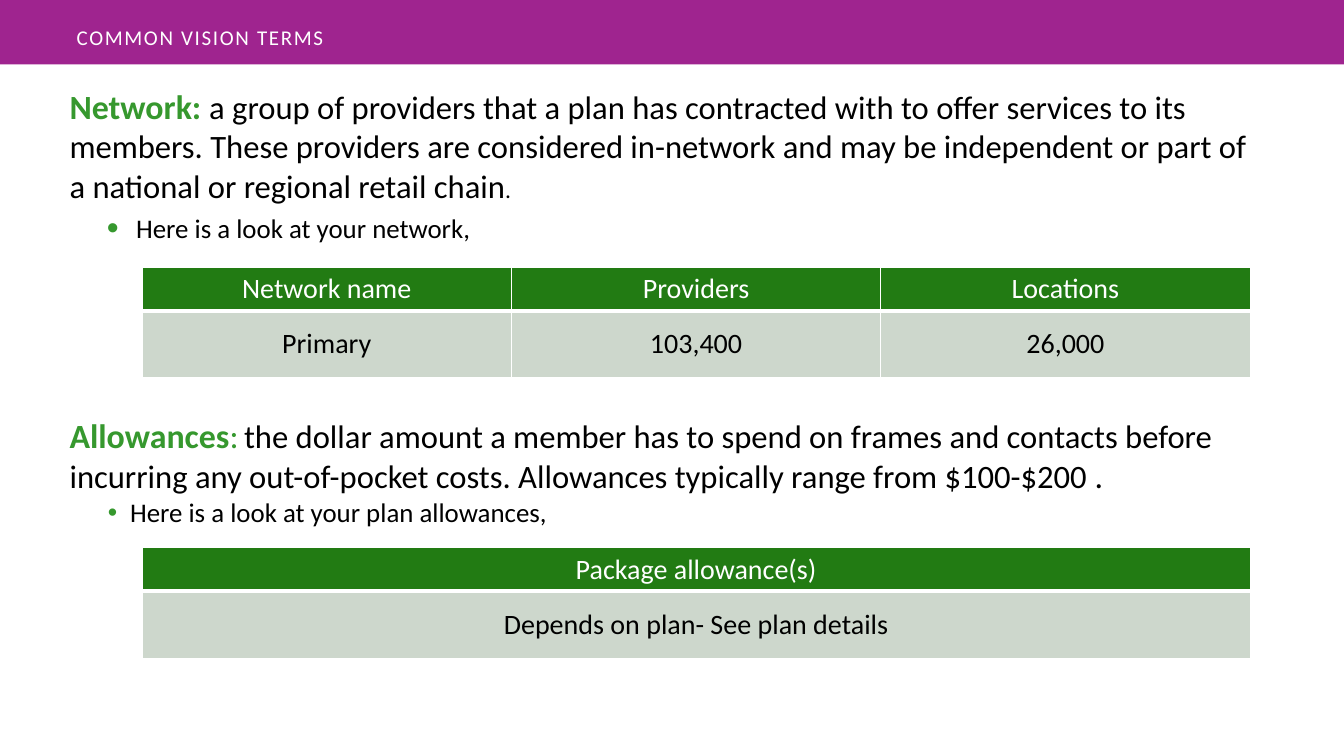
from lxml import etree
from pptx import Presentation
from pptx import util as u
from pptx.dml.color import RGBColor
from pptx.enum import shapes, text
from pptx.oxml.ns import qn

FONT = "Calibri"
PURPLE, GREEN, DARK_GREEN, PALE = "9F248F", "36982E", "227B13", "CDD7CC"
WHITE, BLACK = "FFFFFF", "000000"
WIDTH, HEIGHT = 13.33, 7.5
LEFT, TEXT_WIDTH = 0.57, 12.14
GRID_LEFT, GRID_WIDTH = 1.41, 10.99

HEADING = "COMMON VISION TERMS"
TERMS = [
    {
        "top": 0.79, "height": 1.75,
        "definition": [
            ("Network: ", 24.2, GREEN, True),
            ("a group of providers that a plan has contracted with to offer services "
             "to its members. These providers are considered in-network and may be "
             "independent or part of a national or regional retail chain", 23.3, BLACK, False),
            (".", 16.7, BLACK, False),
        ],
        "lead": "Here is a look at your network,",
        "margin": 0.66, "hang": 0.29, "bullet_size": 126, "gap": 5,
        "grid_top": 2.65, "row_heights": (0.43, 0.66),
        "rows": [("Network name", "Providers", "Locations"),
                 ("Primary", "103,400", "26,000")],
    },
    {
        "top": 4.05, "height": 1.3,
        "definition": [
            ("Allowances", 24.2, GREEN, True),
            (":", 24.2, GREEN, False),
            (" ", 16.7, GREEN, False),
            ("the dollar amount a member has to spend on frames and contacts before "
             "incurring any out-of-pocket costs. Allowances typically range from "
             "$100-$200 ", 23.3, BLACK, False),
            (".", 24.2, BLACK, False),
        ],
        "lead": "Here is a look at your plan allowances,",
        "margin": 0.6, "hang": 0.22, "bullet_size": 100, "gap": 0,
        "grid_top": 5.43, "row_heights": (0.43, 0.67),
        "rows": [("Package allowance(s)",), ("Depends on plan- See plan details",)],
    },
]


def color(value):
    return RGBColor.from_string(value)


def style(run, size, value, bold=False):
    run.font.name = FONT
    run.font.size = u.Pt(size)
    run.font.color.rgb = color(value)
    run.font.bold = bold


def place(shape, left, top, width, height):
    shape.left, shape.top = u.Inches(left), u.Inches(top)
    shape.width, shape.height = u.Inches(width), u.Inches(height)


def set_insets(frame, across, down):
    frame.margin_left = frame.margin_right = u.Inches(across)
    frame.margin_top = frame.margin_bottom = u.Inches(down)


def add_bullet(paragraph, term):
    props = paragraph._p.get_or_add_pPr()
    props.set("marL", str(u.Inches(term["margin"])))
    props.set("indent", str(-u.Inches(term["hang"])))
    tint = etree.SubElement(props, qn("a:buClr"))
    etree.SubElement(tint, qn("a:srgbClr"), val=GREEN)
    etree.SubElement(props, qn("a:buSzPct"), val=str(term["bullet_size"] * 1000))
    etree.SubElement(props, qn("a:buFont"), typeface="Arial")
    etree.SubElement(props, qn("a:buChar"), char="•")


def add_borders(cell, bottom):
    props = cell._tc.get_or_add_tcPr()
    for side, points in (("L", 1), ("R", 1), ("T", 1), ("B", bottom)):
        line = etree.SubElement(props, qn("a:ln" + side), w=str(u.Pt(points)))
        fill = etree.SubElement(line, qn("a:solidFill"))
        etree.SubElement(fill, qn("a:srgbClr"), val=WHITE)


def add_heading(slide):
    band = slide.shapes.add_shape(shapes.MSO_SHAPE.RECTANGLE, 0, 0,
                                  u.Inches(WIDTH), u.Inches(0.64))
    band.shadow.inherit = False
    band.fill.solid()
    band.fill.fore_color.rgb = color(PURPLE)
    band.line.fill.background()
    slide.shapes._spTree.insert(2, band._element)

    heading = slide.shapes.title
    place(heading, 0.6, 0.15, 9.7, 0.43)
    frame = heading.text_frame
    frame.text = HEADING
    frame.vertical_anchor = text.MSO_ANCHOR.MIDDLE
    set_insets(frame, 0.16, 0.05)
    frame.paragraphs[0].alignment = text.PP_ALIGN.LEFT
    words = frame.paragraphs[0].runs[0]
    style(words, 15, WHITE)
    words._r.get_or_add_rPr().set("spc", "120")


def add_definition(slide, term):
    box = slide.shapes.add_textbox(0, 0, 0, 0)
    place(box, LEFT, term["top"], TEXT_WIDTH, term["height"])
    frame = box.text_frame
    frame.word_wrap = True
    set_insets(frame, 0.12, 0.06)
    for words, size, value, bold in term["definition"]:
        run = frame.paragraphs[0].add_run()
        run.text = words
        style(run, size, value, bold)
    lead = frame.add_paragraph()
    lead.text = term["lead"]
    lead.space_before = u.Pt(term["gap"])
    style(lead.runs[0], 19.2, BLACK)
    add_bullet(lead, term)


def add_grid(slide, term):
    rows, heights = term["rows"], term["row_heights"]
    count = len(rows[0])
    grid = slide.shapes.add_table(
        len(rows), count, u.Inches(GRID_LEFT), u.Inches(term["grid_top"]),
        u.Inches(GRID_WIDTH), u.Inches(sum(heights))).table
    for column in grid.columns:
        column.width = u.Inches(GRID_WIDTH / count)
    looks = [(DARK_GREEN, WHITE, 3), (PALE, BLACK, 1)]
    for r, (labels, height, look) in enumerate(zip(rows, heights, looks)):
        grid.rows[r].height = u.Inches(height)
        background, ink, bottom = look
        for c, label in enumerate(labels):
            cell = grid.cell(r, c)
            add_borders(cell, bottom)
            cell.fill.solid()
            cell.fill.fore_color.rgb = color(background)
            cell.vertical_anchor = text.MSO_ANCHOR.MIDDLE
            set_insets(cell, 0.13, 0.05)
            cell.text_frame.text = label
            paragraph = cell.text_frame.paragraphs[0]
            paragraph.alignment = text.PP_ALIGN.CENTER
            style(paragraph.runs[0], 20, ink)


def main():
    deck = Presentation()
    deck.slide_width, deck.slide_height = u.Inches(WIDTH), u.Inches(HEIGHT)
    slide = deck.slides.add_slide(deck.slide_layouts[5])
    add_heading(slide)
    for term in TERMS:
        add_definition(slide, term)
        add_grid(slide, term)
    deck.save("out.pptx")


if __name__ == "__main__":
    main()
